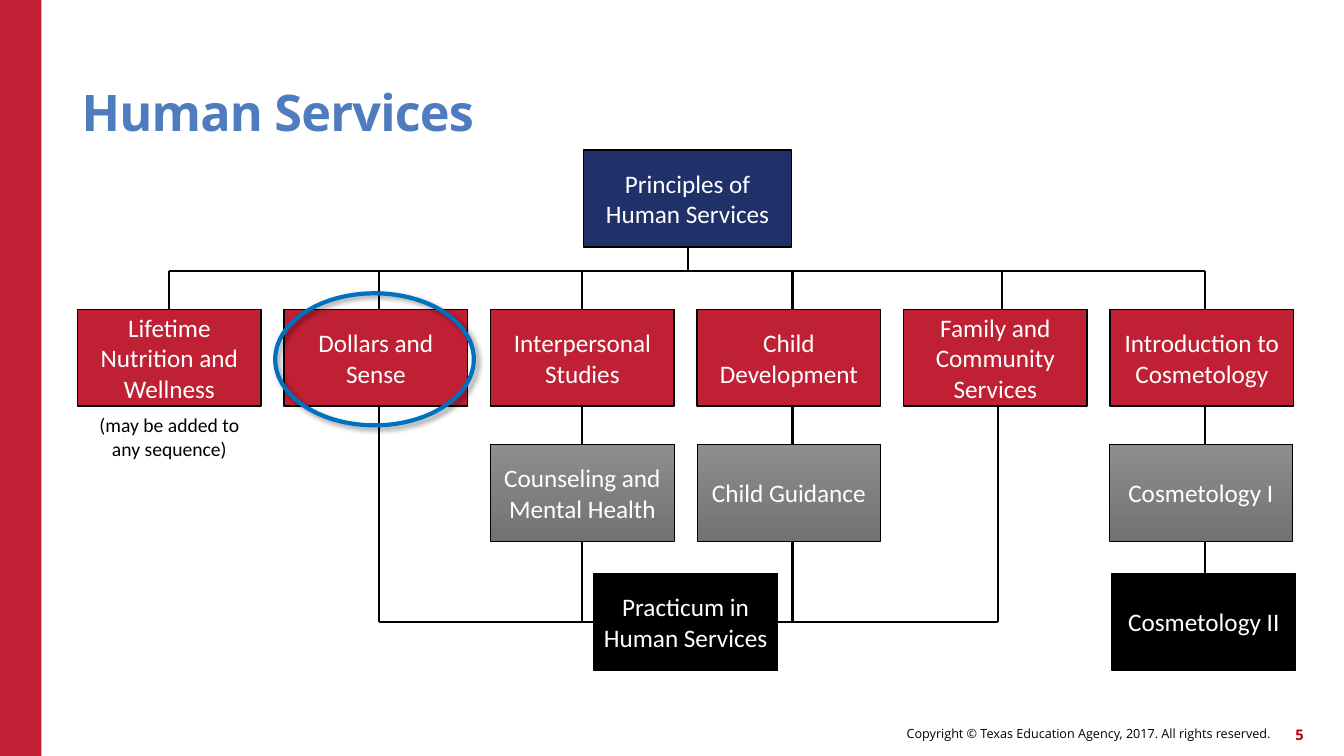
from dataclasses import dataclass
from typing import Optional

from lxml.etree import SubElement
from pptx import Presentation
from pptx.dml.color import RGBColor
from pptx.enum.shapes import MSO_CONNECTOR, MSO_SHAPE
from pptx.enum.text import MSO_ANCHOR, MSO_AUTO_SIZE, PP_ALIGN
from pptx.oxml.ns import qn
from pptx.shapes.autoshape import Shape
from pptx.slide import Slide
from pptx.text.text import TextFrame
from pptx.util import Inches, Pt

BLACK = RGBColor(0x00, 0x00, 0x00)
WHITE = RGBColor(0xFF, 0xFF, 0xFF)
RED = RGBColor(0xC0, 0x20, 0x33)
NAVY = RGBColor(0x20, 0x30, 0x69)
TITLE_BLUE = RGBColor(0x4E, 0x7C, 0xBE)
NUMBER_RED = RGBColor(0xC0, 0x00, 0x00)
RING_BLUE = RGBColor(0x00, 0x70, 0xC0)
GRAY_TOP = RGBColor(0x8E, 0x8E, 0x8E)
GRAY_BOTTOM = RGBColor(0x72, 0x72, 0x72)

BOX_WIDTH, BOX_HEIGHT = 1.82, 0.96
FIRST_LEFT, LAST_LEFT = 0.77, 11.01
COURSE_TOP, SECOND_TOP, FINAL_TOP = 3.07, 4.41, 5.69
COURSE_BOTTOM = COURSE_TOP + BOX_HEIGHT
SECOND_BOTTOM = SECOND_TOP + BOX_HEIGHT
FINAL_MIDDLE = FINAL_TOP + BOX_HEIGHT / 2
BUS_Y = 2.69
TOP, LEFT, BOTTOM, RIGHT = range(4)

COURSES = [
    "Lifetime Nutrition and Wellness",
    "Dollars and Sense",
    "Interpersonal Studies",
    "Child Development",
    "Family and Community Services",
    "Introduction to Cosmetology",
]


def column_left(column: int) -> float:
    return FIRST_LEFT + column * (LAST_LEFT - FIRST_LEFT) / (len(COURSES) - 1)


@dataclass
class CourseBox:
    text: str
    left: float
    top: float
    color: Optional[RGBColor]  # None gives the gray gradient
    width: float = BOX_WIDTH


@dataclass
class Joint:
    box: str
    side: int


@dataclass
class Link:
    x1: float
    y1: float
    x2: float
    y2: float
    begin: Optional[Joint] = None
    end: Optional[Joint] = None


BOXES = [
    CourseBox("Principles of Human Services", 5.79, 1.49, NAVY, 2.06),
    *[CourseBox(name, column_left(column), COURSE_TOP, RED) for column, name in enumerate(COURSES)],
    CourseBox("Counseling and Mental Health", column_left(2), SECOND_TOP, None),
    CourseBox("Child Guidance", column_left(3), SECOND_TOP, None),
    CourseBox("Cosmetology I", 11, SECOND_TOP, None),
    CourseBox("Cosmetology II", 11.03, FINAL_TOP, BLACK),
    CourseBox("Practicum in Human Services", 5.89, FINAL_TOP, BLACK),
]

LIFETIME_X = column_left(0) + BOX_WIDTH / 2
STUDIES_X = column_left(2) + BOX_WIDTH / 2
DOLLARS_X, CHILD_X, FAMILY_X, COSMETOLOGY_X = 3.76, 7.86, 9.94, 11.95
PRINCIPLES_X, FAMILY_DOWN_X = 6.82, 9.9

LINKS = [
    Link(LIFETIME_X, BUS_Y, COSMETOLOGY_X, BUS_Y),
    Link(LIFETIME_X, COURSE_TOP, LIFETIME_X, BUS_Y, begin=Joint(COURSES[0], TOP)),
    Link(STUDIES_X, COURSE_TOP, STUDIES_X, BUS_Y, begin=Joint(COURSES[2], TOP)),
    *[Link(x, COURSE_TOP, x, BUS_Y) for x in (DOLLARS_X, CHILD_X, FAMILY_X, COSMETOLOGY_X)],
    Link(PRINCIPLES_X, BUS_Y, PRINCIPLES_X, 2.45,
         end=Joint("Principles of Human Services", BOTTOM)),
    Link(STUDIES_X, SECOND_TOP, STUDIES_X, COURSE_BOTTOM,
         Joint("Counseling and Mental Health", TOP), Joint(COURSES[2], BOTTOM)),
    *[Link(x, SECOND_TOP, x, COURSE_BOTTOM) for x in (CHILD_X, COSMETOLOGY_X)],
    Link(COSMETOLOGY_X, FINAL_TOP, COSMETOLOGY_X, SECOND_BOTTOM),
    Link(FAMILY_DOWN_X, FINAL_MIDDLE, FAMILY_DOWN_X, COURSE_BOTTOM),
    Link(DOLLARS_X, FINAL_MIDDLE, DOLLARS_X, COURSE_BOTTOM),
    Link(7.71, FINAL_MIDDLE, FAMILY_DOWN_X, FINAL_MIDDLE,
         begin=Joint("Practicum in Human Services", RIGHT)),
    Link(DOLLARS_X, FINAL_MIDDLE, 5.89, FINAL_MIDDLE,
         end=Joint("Practicum in Human Services", LEFT)),
    Link(STUDIES_X, FINAL_MIDDLE, STUDIES_X, SECOND_BOTTOM,
         end=Joint("Counseling and Mental Health", BOTTOM)),
    Link(CHILD_X, FINAL_MIDDLE, CHILD_X, SECOND_BOTTOM),
]


def write(frame: TextFrame, text: str, size: float, color: RGBColor, align: PP_ALIGN,
          anchor: MSO_ANCHOR = MSO_ANCHOR.MIDDLE, font: str = "Calibri",
          bold: bool = False, inset: bool = True) -> None:
    frame.word_wrap = True
    frame.auto_size = MSO_AUTO_SIZE.NONE
    frame.vertical_anchor = anchor
    if not inset:
        frame.margin_left = frame.margin_right = frame.margin_top = frame.margin_bottom = 0
    para = frame.paragraphs[0]
    para.alignment = align
    span = para.add_run()
    span.text = text
    span.font.name, span.font.size, span.font.bold = font, Pt(size), bold
    span.font.color.rgb = color


def add_text(page: Slide, left: float, top: float, width: float, height: float) -> TextFrame:
    return page.shapes.add_textbox(
        Inches(left), Inches(top), Inches(width), Inches(height)).text_frame


def add_box(page: Slide, item: CourseBox) -> Shape:
    box = page.shapes.add_shape(MSO_SHAPE.RECTANGLE, Inches(item.left), Inches(item.top),
                                Inches(item.width), Inches(BOX_HEIGHT))
    box.shadow.inherit = False
    if item.color is None:
        box.fill.gradient()
        box.fill.gradient_angle = 270
        for stop, color in zip(box.fill.gradient_stops, (GRAY_TOP, GRAY_BOTTOM)):
            stop.color.rgb = color
    else:
        box.fill.solid()
        box.fill.fore_color.rgb = item.color
    box.line.color.rgb = BLACK
    box.line.width = Pt(0.5 if item.color is None else 1)
    write(box.text_frame, item.text, 18, WHITE, PP_ALIGN.CENTER)
    return box


def add_link(page: Slide, link: Link, boxes: dict[str, Shape]) -> None:
    line = page.shapes.add_connector(MSO_CONNECTOR.STRAIGHT, Inches(link.x1), Inches(link.y1),
                                     Inches(link.x2), Inches(link.y2))
    line.line.color.rgb = BLACK
    line.line.width = Pt(1.5)
    SubElement(line._element.spPr, qn("a:effectLst"))
    if link.begin:
        line.begin_connect(boxes[link.begin.box], link.begin.side)
    if link.end:
        line.end_connect(boxes[link.end.box], link.end.side)


def add_ring(page: Slide) -> None:
    """Circle the highlighted course with a softly shadowed ellipse."""
    ring = page.shapes.add_shape(MSO_SHAPE.OVAL, Inches(2.73), Inches(2.91),
                                 Inches(1.97), Inches(1.31))
    ring.fill.background()
    ring.line.color.rgb = RING_BLUE
    ring.line.width = Pt(3)
    ring.shadow.inherit = False
    effects = ring._element.spPr.find(qn("a:effectLst"))
    shadow = SubElement(effects, qn("a:outerShdw"), blurRad=str(Pt(4)), dist=str(Pt(3)),
                        dir=str(45 * 60000), algn="tl", rotWithShape="0")
    shade = SubElement(shadow, qn("a:srgbClr"), val=str(BLACK))
    SubElement(shade, qn("a:alpha"), val="40000")


def main() -> None:
    deck = Presentation()
    deck.slide_width, deck.slide_height = Inches(13.33), Inches(7.5)
    page = deck.slides.add_slide(deck.slide_layouts[5])

    title = page.shapes.title
    title.left, title.top = Inches(0.81), Inches(0.45)
    title.width, title.height = Inches(11), Inches(0.96)
    write(title.text_frame, "Human Services", 36, TITLE_BLUE, PP_ALIGN.LEFT,
          MSO_ANCHOR.BOTTOM, "Open Sans", bold=True, inset=False)
    heading = title.text_frame.paragraphs[0]
    heading.line_spacing = 0.9
    heading.runs[0].font._element.set("spc", "-60")

    band = page.shapes.add_shape(MSO_SHAPE.RECTANGLE, 0, 0, Inches(0.41), deck.slide_height)
    band.shadow.inherit = False
    band.fill.solid()
    band.fill.fore_color.rgb = RED
    band.line.fill.background()

    write(add_text(page, 6.14, 7.12, 6.46, 0.32),
          "Copyright © Texas Education Agency, 2017. All rights reserved.",
          9, BLACK, PP_ALIGN.RIGHT, font="Open Sans", inset=False)
    write(add_text(page, 12.51, 7.13, 0.42, 0.32), "5", 10.5, NUMBER_RED, PP_ALIGN.RIGHT,
          font="Open Sans", bold=True, inset=False)

    boxes = {item.text: add_box(page, item) for item in BOXES}
    write(add_text(page, FIRST_LEFT, 4.05, BOX_WIDTH, 0.57), "(may be added to any sequence)",
          14, BLACK, PP_ALIGN.CENTER, MSO_ANCHOR.TOP)
    for link in LINKS:
        add_link(page, link, boxes)
    add_ring(page)
    deck.save("out.pptx")


if __name__ == "__main__":
    main()
